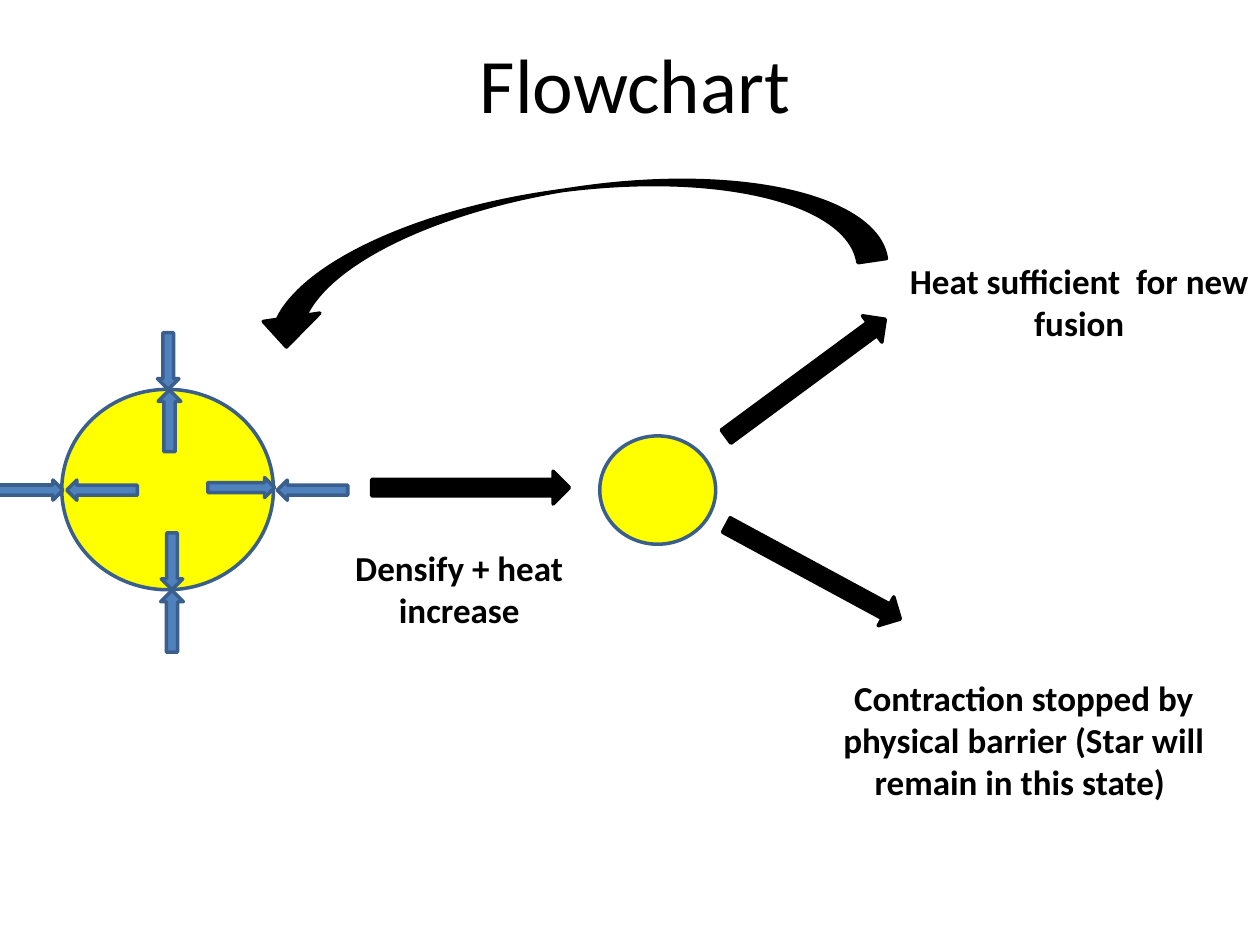
from dataclasses import dataclass

from pptx import Presentation
from pptx.dml.color import RGBColor
from pptx.enum.shapes import MSO_SHAPE
from pptx.enum.text import MSO_ANCHOR, MSO_AUTO_SIZE, PP_ALIGN
from pptx.util import Inches, Pt


@dataclass(frozen=True)
class Theme:
    font: str = "Calibri"
    black: RGBColor = RGBColor(0x00, 0x00, 0x00)
    star: RGBColor = RGBColor(0xFF, 0xFF, 0x00)
    force: RGBColor = RGBColor(0x4F, 0x81, 0xBD)
    outline: RGBColor = RGBColor(0x3A, 0x5F, 0x8C)
    title_size: int = 44
    label_size: int = 20
    line_width: int = 2


THEME = Theme()

# Left, top, width, height, rotation of the arrows pressing on the large star
FORCES = [
    (1.65, 3.79, 0.53, 0.16, 0),
    (1.11, 2.78, 0.45, 0.17, 90),
    (2.20, 3.81, 0.56, 0.16, 180),
    (-0.03, 3.81, 0.53, 0.16, 0),
    (1.14, 4.37, 0.45, 0.17, 90),
    (0.53, 3.81, 0.56, 0.16, 180),
    (1.10, 3.25, 0.49, 0.18, 270),
    (1.12, 4.84, 0.49, 0.18, 270),
]

# Left, top, rotation of the equally long arrows between the steps
STEPS = [(2.95, 3.74, 0), (5.61, 2.87, 323.6), (5.67, 4.41, 28.4)]
STEP_SIZE = (1.57, 0.26)

LABELS = [
    ("Densify + heat increase", (2.36, 4.29, 2.57, 0.77)),
    ("Heat sufficient  for new fusion", (7.07, 2.01, 2.99, 0.77)),
    ("Contraction stopped by physical barrier (Star will remain in this state) ",
     (6.45, 5.32, 3.35, 1.11)),
]


def write_text(frame, text, *, size, bold=False, anchor=MSO_ANCHOR.TOP):
    frame.word_wrap = True
    frame.vertical_anchor = anchor
    para = frame.paragraphs[0]
    para.alignment = PP_ALIGN.CENTER
    span = para.add_run()
    span.text = text
    span.font.name = THEME.font
    span.font.size = Pt(size)
    span.font.bold = bold
    span.font.color.rgb = THEME.black


def add_title(page, text, bounds):
    title = page.shapes.title
    title.left, title.top, title.width, title.height = map(Inches, bounds)
    write_text(title.text_frame, text, size=THEME.title_size, anchor=MSO_ANCHOR.MIDDLE)


def add_label(page, text, bounds):
    box = page.shapes.add_textbox(*map(Inches, bounds))
    write_text(box.text_frame, text, size=THEME.label_size, bold=True)
    box.text_frame.auto_size = MSO_AUTO_SIZE.SHAPE_TO_FIT_TEXT


def add_figure(page, kind, bounds, *, fill, line, rotation=0):
    figure = page.shapes.add_shape(kind, *map(Inches, bounds))
    figure.rotation = rotation
    figure.shadow.inherit = False
    figure.fill.solid()
    figure.fill.fore_color.rgb = fill
    figure.line.color.rgb = line
    figure.line.width = Pt(THEME.line_width)


def add_star(page, bounds):
    add_figure(page, MSO_SHAPE.OVAL, bounds, fill=THEME.star, line=THEME.outline)


def add_flow_arrow(page, kind, bounds, rotation):
    add_figure(page, kind, bounds, fill=THEME.black, line=THEME.black, rotation=rotation)


def main():
    deck = Presentation()
    deck.slide_width, deck.slide_height = Inches(10), Inches(7.5)
    page = deck.slides.add_slide(deck.slide_layouts[5])
    add_title(page, "Flowchart", (0.54, 0.03, 9, 1.25))

    # Large star with inward and outward forces
    add_star(page, (0.49, 3.09, 1.68, 1.59))
    for *bounds, rotation in FORCES:
        add_figure(page, MSO_SHAPE.RIGHT_ARROW, bounds, fill=THEME.force,
                   line=THEME.outline, rotation=rotation)

    # Contracted star and the steps to and from it
    add_star(page, (4.76, 3.46, 0.92, 0.86))
    for left, top, rotation in STEPS:
        add_flow_arrow(page, MSO_SHAPE.RIGHT_ARROW, (left, top, *STEP_SIZE), rotation)

    # Loop back to the large star
    add_flow_arrow(page, MSO_SHAPE.CURVED_RIGHT_ARROW, (4.02, -0.55, 0.91, 5.04), 81.6)

    # Step descriptions
    for text, bounds in LABELS:
        add_label(page, text, bounds)

    deck.save("out.pptx")


if __name__ == "__main__":
    main()
